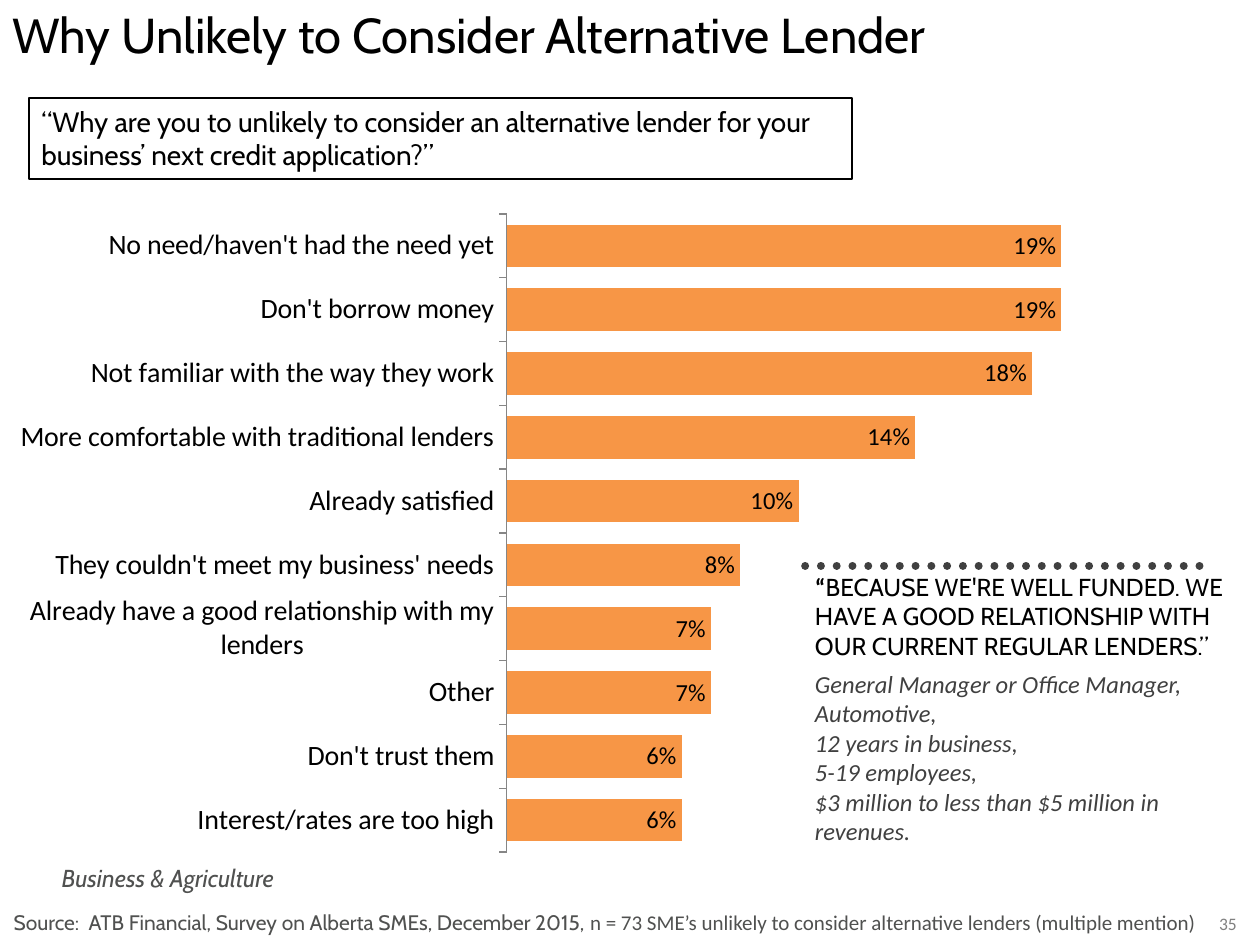
from dataclasses import dataclass

from lxml import etree
from pptx import Presentation
from pptx.chart.data import CategoryChartData
from pptx.dml.color import RGBColor
from pptx.enum.chart import XL_CHART_TYPE, XL_LABEL_POSITION, XL_TICK_LABEL_POSITION, XL_TICK_MARK
from pptx.enum.dml import MSO_LINE
from pptx.enum.shapes import MSO_CONNECTOR, MSO_SHAPE
from pptx.enum.text import MSO_ANCHOR, PP_ALIGN
from pptx.oxml import parse_xml
from pptx.oxml.ns import nsdecls, qn
from pptx.util import Inches, Pt

COLORS = {
    "text": "000000",
    "source": "505150",
    "speaker": "404040",
    "number": "808080",
    "bar": "F79646",
    "axis": "868686",
}
HEADING_FONT, BODY_FONT = "Cabin", "Calibri"


@dataclass(frozen=True)
class Box:
    left: float
    top: float
    width: float
    height: float

    def lengths(self):
        return [Inches(v) for v in (self.left, self.top, self.width, self.height)]


@dataclass(frozen=True)
class Run:
    text: str
    font: str = HEADING_FONT
    bold: bool = False


@dataclass(frozen=True)
class Reason:
    label: str
    share: float


REASONS = [
    Reason("No need/haven't had the need yet", 0.19),
    Reason("Don't borrow money", 0.19),
    Reason("Not familiar with the way they work", 0.18),
    Reason("More comfortable with traditional lenders", 0.14),
    Reason("Already satisfied", 0.10),
    Reason("They couldn't meet my business' needs", 0.08),
    Reason("Already have a good relationship with my lenders", 0.07),
    Reason("Other", 0.07),
    Reason("Don't trust them", 0.06),
    Reason("Interest/rates are too high", 0.06),
]


def rgb(name: str) -> RGBColor:
    return RGBColor.from_string(COLORS[name])


def set_font(font, *, name=BODY_FONT, size=14, color="text", bold=False, italic=False) -> None:
    font.name, font.size = name, Pt(size)
    font.bold, font.italic = bold, italic
    font.color.rgb = rgb(color)


def write(frame, *paragraphs: list[Run], size=14, color="text", italic=False,
          align=PP_ALIGN.LEFT, anchor=MSO_ANCHOR.TOP) -> None:
    frame.word_wrap = True
    frame.vertical_anchor = anchor
    for index, runs in enumerate(paragraphs):
        paragraph = frame.add_paragraph() if index else frame.paragraphs[0]
        paragraph.alignment = align
        for part in runs:
            run = paragraph.add_run()
            run.text = part.text
            set_font(run.font, name=part.font, size=size, color=color,
                     bold=part.bold, italic=italic)


def add_text(slide, box: Box, *paragraphs: list[Run], **text_format) -> None:
    write(slide.shapes.add_textbox(*box.lengths()).text_frame, *paragraphs, **text_format)


def add_question(slide, box: Box, question: str) -> None:
    frame = slide.shapes.add_shape(MSO_SHAPE.RECTANGLE, *box.lengths())
    frame.shadow.inherit = False
    frame.fill.background()
    frame.line.color.rgb = rgb("text")
    frame.line.width = Pt(1)
    write(frame.text_frame, [Run(question)], size=16)


def set_plot_area(chart, box: Box) -> None:
    """Fix the inner plot area, given as fractions of the chart."""
    plot_area = chart._chartSpace.chart.plotArea
    for layout in plot_area.findall(qn("c:layout")):
        plot_area.remove(layout)
    plot_area.insert(0, parse_xml(
        f'<c:layout {nsdecls("c")}><c:manualLayout><c:layoutTarget val="inner"/>'
        f'<c:xMode val="edge"/><c:yMode val="edge"/><c:x val="{box.left}"/><c:y val="{box.top}"/>'
        f'<c:w val="{box.width}"/><c:h val="{box.height}"/></c:manualLayout></c:layout>'))


def add_reasons_chart(slide, box: Box, reasons: list[Reason]) -> None:
    data = CategoryChartData(number_format="0%")
    data.categories = [reason.label for reason in reasons]
    data.add_series("Series 1", [reason.share for reason in reasons])
    chart = slide.shapes.add_chart(XL_CHART_TYPE.BAR_CLUSTERED, *box.lengths(), data).chart
    chart.has_legend = chart.has_title = False
    set_font(chart.font, name=HEADING_FONT, size=18)
    set_plot_area(chart, Box(0.408, 0.05, 0.459, 0.945))

    reason_axis = chart.category_axis
    reason_axis.reverse_order = True
    reason_axis.has_major_gridlines = False
    reason_axis.major_tick_mark = XL_TICK_MARK.OUTSIDE
    reason_axis.tick_label_position = XL_TICK_LABEL_POSITION.NEXT_TO_AXIS
    reason_axis.format.line.color.rgb = rgb("axis")
    set_font(reason_axis.tick_labels.font, size=16)

    share_axis = chart.value_axis
    share_axis.visible = False
    share_axis.has_major_gridlines = False
    share_axis.minimum_scale, share_axis.maximum_scale = 0, 0.2

    plot = chart.plots[0]
    plot.gap_width = 50
    plot.vary_by_categories = False
    bars = plot.series[0].format
    bars.fill.solid()
    bars.fill.fore_color.rgb = rgb("bar")
    plot.has_data_labels = True
    labels = plot.data_labels
    labels.show_value = True
    labels.position = XL_LABEL_POSITION.INSIDE_END
    labels.number_format, labels.number_format_is_linked = "0%", False
    set_font(labels.font)


def add_dotted_rule(slide, left: float, right: float, top: float) -> None:
    rule = slide.shapes.add_connector(
        MSO_CONNECTOR.STRAIGHT, Inches(left), Inches(top), Inches(right), Inches(top))
    rule.line.color.rgb = rgb("speaker")
    rule.line.width = Pt(4.5)
    rule.line.dash_style = MSO_LINE.ROUND_DOT
    properties = rule._element.spPr
    properties.find(qn("a:ln")).set("cap", "rnd")
    etree.SubElement(properties, qn("a:effectLst"))


def main() -> None:
    presentation = Presentation()
    presentation.slide_width, presentation.slide_height = Inches(10), Inches(7.5)
    slide = presentation.slides.add_slide(presentation.slide_layouts[6])

    add_text(slide, Box(9.5, 7.2, 0.49, 0.27), [Run("35", BODY_FONT)],
             size=10, color="number", align=PP_ALIGN.CENTER)
    add_text(slide, Box(0.39, 6.8, 2.81, 0.34), [Run("Business & Agriculture")],
             color="source", italic=True)
    add_text(slide, Box(0.01, 7.17, 9.65, 0.3), [
        Run("Source:  ATB Financial, Survey on Alberta SMEs, December 2015, "),
        Run("n = 73 SME’s unlikely to consider alternative lenders (multiple mention)", BODY_FONT),
    ], size=12, color="source")
    add_text(slide, Box(0, -0.01, 10, 0.79),
             [Run("Why Unlikely to Consider Alternative Lender")], size=28)

    add_reasons_chart(slide, Box(-0.1, 1.43, 10.1, 5.36), REASONS)
    add_question(slide, Box(0.23, 0.78, 6.53, 0.64),
                 "“Why are you to unlikely to consider an alternative lender "
                 "for your business’ next credit application?”")

    add_text(slide, Box(6.37, 4.49, 3.57, 0.81), [
        Run("“", BODY_FONT, bold=True),
        Run("BECAUSE WE'RE WELL FUNDED. WE HAVE A GOOD RELATIONSHIP WITH "
            "OUR CURRENT REGULAR LENDERS.”"),
    ])
    add_dotted_rule(slide, 6.39, 9.63, 4.49)
    speaker = [
        "General Manager or Office Manager,",
        "Automotive,",
        "12 years in business,",
        "5-19 employees,",
        "$3 million to less than $5 million in revenues.",
    ]
    add_text(slide, Box(6.37, 5.26, 3.57, 1.51), *([Run(line, BODY_FONT)] for line in speaker),
             color="speaker", italic=True)

    presentation.save("out.pptx")


if __name__ == "__main__":
    main()
